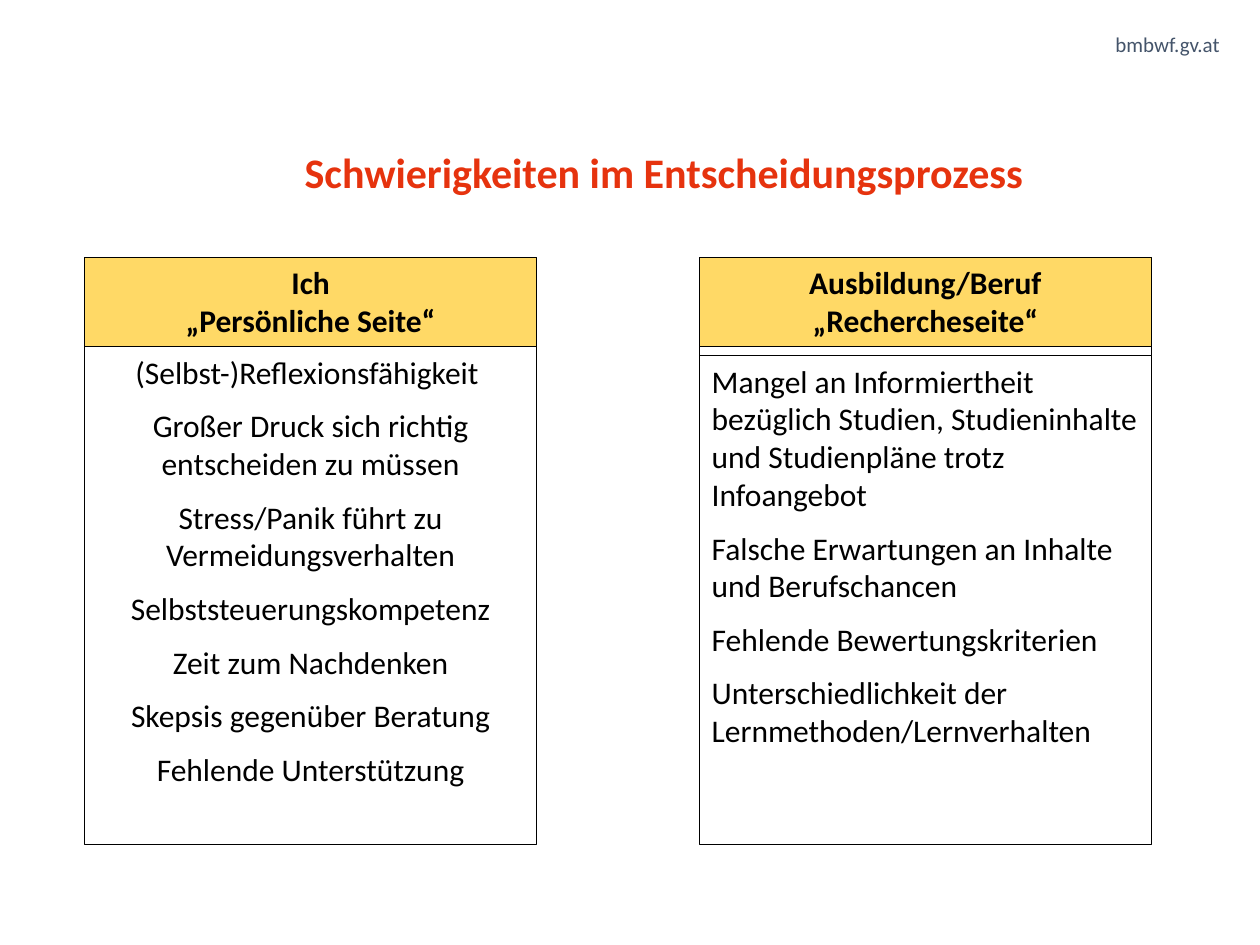
from dataclasses import dataclass

from pptx import Presentation
from pptx.dml.color import RGBColor
from pptx.enum import shapes, text
from pptx.util import Inches, Pt

WIDTH, HEIGHT = 10, 7.5
FONT = "Calibri"
BLACK, WHITE, YELLOW, RED, SLATE = "000000", "FFFFFF", "FFD966", "E6330E", "44546A"
LEFT, PITCH, COLUMN_WIDTH = 0.67, 4.88, 3.59
TOP, HEADER_HEIGHT, BOTTOM = 2.04, 0.71, 6.7


@dataclass(frozen=True)
class Style:
    size: float
    color: str = BLACK
    bold: bool = False
    align: text.PP_ALIGN = text.PP_ALIGN.CENTER
    gap: float = 0


@dataclass(frozen=True)
class Side:
    column: int
    heading: list[str]
    difficulties: list[str]
    align: text.PP_ALIGN
    backing_height: float
    list_top: float


SIDES = [
    Side(
        0,
        ["Ich", "„Persönliche Seite“"],
        [
            "(Selbst-)Reflexionsfähigkeit ",
            "Großer Druck sich richtig entscheiden zu müssen",
            "Stress/Panik führt zu Vermeidungsverhalten",
            "Selbststeuerungskompetenz",
            "Zeit zum Nachdenken",
            "Skepsis gegenüber Beratung",
            "Fehlende Unterstützung",
        ],
        text.PP_ALIGN.CENTER,
        2.97,
        TOP + HEADER_HEIGHT,
    ),
    Side(
        1,
        ["Ausbildung/Beruf", "„Rechercheseite“"],
        [
            "Mangel an Informiertheit bezüglich Studien, Studieninhalte "
            "und Studienpläne trotz Infoangebot",
            "Falsche Erwartungen an Inhalte und Berufschancen",
            "Fehlende Bewertungskriterien",
            "Unterschiedlichkeit der Lernmethoden/Lernverhalten",
        ],
        text.PP_ALIGN.LEFT,
        3.49,
        2.82,
    ),
]


def rgb(color: str) -> RGBColor:
    return RGBColor.from_string(color)


def write(shape, lines: list[str], style: Style) -> None:
    frame = shape.text_frame
    frame.text = "\n".join(lines)
    frame.word_wrap = True
    frame.vertical_anchor = text.MSO_ANCHOR.TOP
    for index, paragraph in enumerate(frame.paragraphs):
        paragraph.alignment = style.align
        paragraph.space_before = Pt(style.gap if index else 0)
        for run in paragraph.runs:
            run.font.name = FONT
            run.font.size = Pt(style.size)
            run.font.bold = style.bold
            run.font.color.rgb = rgb(style.color)


def add_label(slide, left: float, top: float, width: float, height: float,
              label: str, style: Style, inset: bool = True) -> None:
    box = slide.shapes.add_textbox(*map(Inches, (left, top, width, height)))
    write(box, [label], style)
    if not inset:
        frame = box.text_frame
        frame.margin_left = frame.margin_right = 0
        frame.margin_top = frame.margin_bottom = 0


def add_panel(group, column: int, top: float, height: float, fill: str):
    left = LEFT + column * PITCH
    panel = group.shapes.add_shape(
        shapes.MSO_SHAPE.RECTANGLE,
        *map(Inches, (left, top, COLUMN_WIDTH, height)),
    )
    panel.shadow.inherit = False
    panel.fill.solid()
    panel.fill.fore_color.rgb = rgb(fill)
    panel.line.color.rgb = rgb(BLACK)
    panel.line.width = Pt(0.5)
    return panel


def add_side(slide, side: Side) -> None:
    group = slide.shapes.add_group_shape()
    add_panel(group, side.column, TOP, side.backing_height, WHITE)
    heading = add_panel(group, side.column, TOP, HEADER_HEIGHT, YELLOW)
    write(heading, side.heading, Style(18, bold=True))
    difficulties = add_panel(
        group, side.column, side.list_top, BOTTOM - side.list_top, WHITE
    )
    write(difficulties, side.difficulties, Style(18, align=side.align, gap=9))


def main() -> None:
    deck = Presentation()
    deck.slide_width, deck.slide_height = Inches(WIDTH), Inches(HEIGHT)
    slide = deck.slides.add_slide(deck.slide_layouts[6])
    add_label(slide, 7.27, 0.25, 2.41, 0.2, "bmbwf.gv.at",
              Style(12, SLATE, align=text.PP_ALIGN.RIGHT), inset=False)
    add_label(slide, 0.27, 1.11, WIDTH, 0.5,
              "Schwierigkeiten im Entscheidungsprozess", Style(24, RED, bold=True))
    for side in SIDES:
        add_side(slide, side)
    deck.save("out.pptx")


if __name__ == "__main__":
    main()
